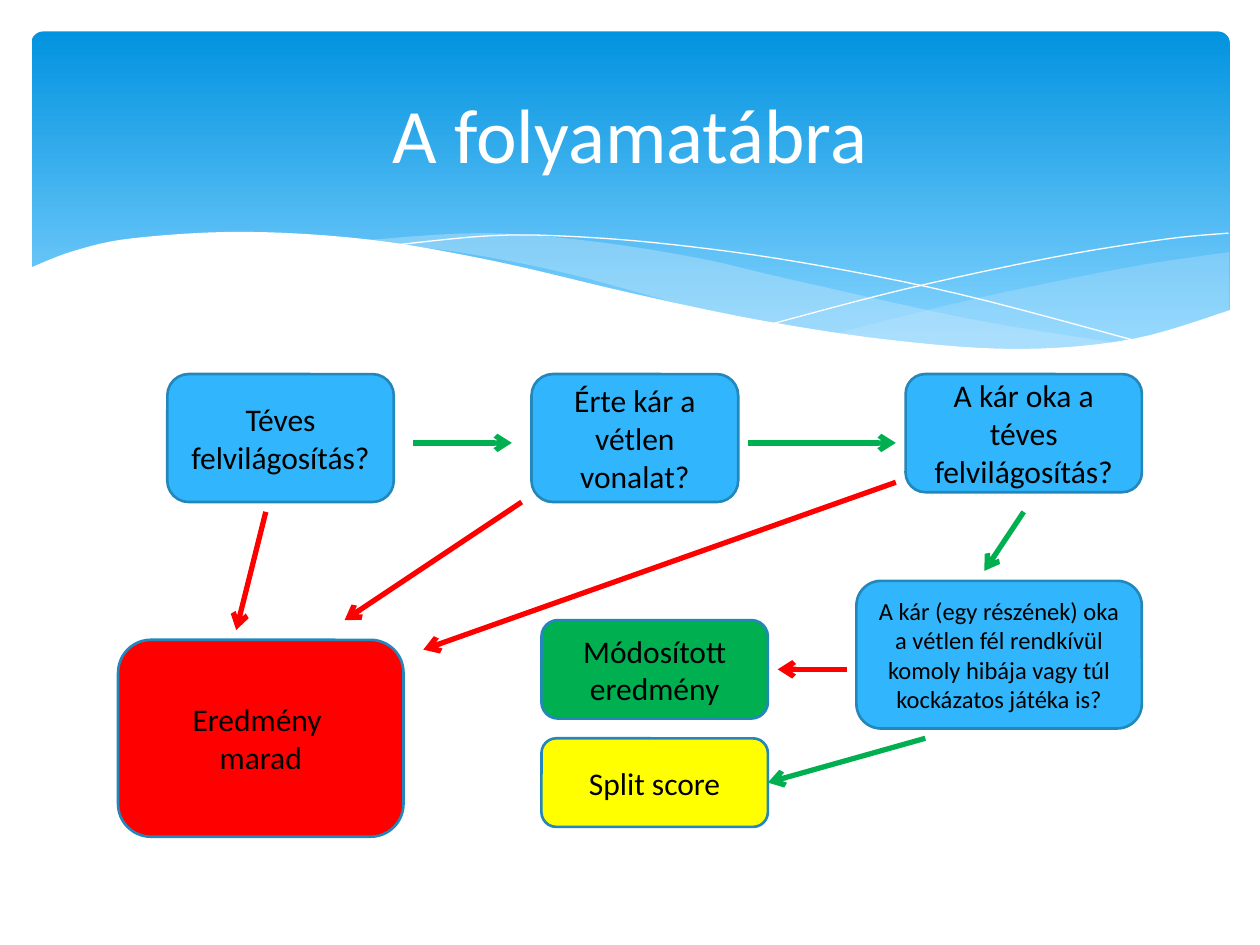
from lxml.etree import SubElement
from pptx import Presentation
from pptx.dml.color import RGBColor
from pptx.enum.shapes import MSO_CONNECTOR as CONNECTOR, MSO_SHAPE as SHAPE
from pptx.enum.text import MSO_ANCHOR as ANCHOR, PP_ALIGN as ALIGN
from pptx.oxml.ns import qn
from pptx.util import Pt

COLORS = {
    "white": "FFFFFF", "black": "000000", "sky_top": "0293E0",
    "sky_bottom": "83D3FE", "mist": "C6E7FC", "question": "31B6FD",
    "border": "2487BB", "yes": "00B050", "no": "FF0000", "split": "FFFF00",
}

RIGHT_WAVE = (
    [(702.5, 144), (655, 151), (600, 161.5), (541, 174.5), (476, 191)],
    [(476, 191), (527, 196.5), (578, 200), (628, 198), (668, 191), (702.5, 178)],
)
MIDDLE_WAVE = (
    [(643, 196.6), (558, 183), (453, 160), (399, 147.5), (335, 137.5),
     (274, 133.2), (206, 137.5)],
    [(206, 137.5), (261, 144), (323, 156), (407.5, 178.5), (468, 190),
     (531, 198), (588, 200), (643, 196.6)],
)
FALLING_LINE = [(222.5, 140.4), (278.6, 134.8), (324, 135), (383.8, 139.7),
                (458, 150), (547, 167.8), (653, 195.8)]
RISING_LINE = [(441.4, 185), (518, 165), (602, 147), (665, 136.8), (702, 133.2)]
FRONT_WAVE = (
    [(16.5, 153.4), (42.5, 143.3), (76.3, 136.1), (139, 132.5), (210, 136.8),
     (281.5, 149), (362, 167.8), (434, 182.9), (510, 194.4), (582.5, 199.4),
     (647.3, 193.7), (703.4, 177.1)],
    [(703.4, 237), (16.5, 237)],
)


def rgb(name):
    return RGBColor.from_string(COLORS[name])


def smooth_curve(points, steps=6):
    """Catmull-Rom curve through the points, as a dense list."""
    padded = [points[0], *points, points[-1]]
    curve = [points[0]]
    for a, b, c, d in zip(padded, padded[1:], padded[2:], padded[3:]):
        for step in range(1, steps + 1):
            t = step / steps
            curve.append(tuple(
                0.5 * (2 * q + (r - p) * t + (2 * p - 5 * q + 4 * r - s) * t**2
                       + (3 * q - p - 3 * r + s) * t**3)
                for p, q, r, s in zip(a, b, c, d)))
    return curve


def add_outline(slide, points, close):
    vertices = [(Pt(x), Pt(y)) for x, y in points]
    builder = slide.shapes.build_freeform(*vertices[0])
    builder.add_line_segments(vertices[1:], close=close)
    outline = builder.convert_to_shape()
    outline.shadow.inherit = False
    return outline


def add_wave(slide, edges, color, opacity=100):
    """Filled band; an edge of two points stays straight."""
    points = [point for edge in edges
              for point in (edge if len(edge) == 2 else smooth_curve(edge))]
    wave = add_outline(slide, points, close=True)
    wave.fill.solid()
    wave.fill.fore_color.rgb = rgb(color)
    wave.line.fill.background()
    if opacity < 100:
        tint = wave.fill._xPr.find(qn("a:solidFill"))[0]
        SubElement(tint, qn("a:alpha"), val=str(opacity * 1000))


def add_hairline(slide, points):
    hairline = add_outline(slide, smooth_curve(points), close=False)
    hairline.fill.background()
    hairline.line.color.rgb = rgb("white")
    hairline.line.width = Pt(0)


def add_sky(slide):
    sky = slide.shapes.add_shape(
        SHAPE.ROUNDED_RECTANGLE, Pt(18), Pt(18), Pt(684.7), Pt(194.4))
    sky.adjustments[0] = 0.034
    sky.shadow.inherit = False
    sky.line.fill.background()
    sky.fill.gradient()
    sky.fill.gradient_angle = 270
    stops = zip(sky.fill.gradient_stops, (0, 0.9), ("sky_top", "sky_bottom"))
    for stop, position, color in stops:
        stop.position = position
        stop.color.rgb = rgb(color)


def write_text(shape, text, size=18, color="black"):
    frame = shape.text_frame
    frame.word_wrap = True
    frame.vertical_anchor = ANCHOR.MIDDLE
    frame.text = text
    for paragraph in frame.paragraphs:
        paragraph.alignment = ALIGN.CENTER
        for run in paragraph.runs:
            run.font.name = "Calibri"
            run.font.size = Pt(size)
            run.font.color.rgb = rgb(color)


def add_title(slide, text):
    title = slide.shapes.title
    title.left, title.top, title.width, title.height = map(Pt, (36, 26.6, 648, 98.6))
    write_text(title, text, size=44, color="white")
    slide.shapes._spTree.append(title._element)  # in front of the sky


def add_box(slide, text, left, top, width, height, fill="question", size=18):
    box = slide.shapes.add_shape(
        SHAPE.ROUNDED_RECTANGLE, *map(Pt, (left, top, width, height)))
    box.shadow.inherit = False
    box.fill.solid()
    box.fill.fore_color.rgb = rgb(fill)
    box.line.color.rgb = rgb("border")
    box.line.width = Pt(1.5)
    write_text(box, text, size=size)
    return box


def add_arrow(slide, color, start, end):
    arrow = slide.shapes.add_connector(
        CONNECTOR.STRAIGHT, *map(Pt, (*start, *end)))
    arrow.line.color.rgb = rgb(color)
    arrow.line.width = Pt(3)
    SubElement(arrow.line._get_or_add_ln(), qn("a:tailEnd"), type="arrow")
    SubElement(arrow._element.spPr, qn("a:effectLst"))
    return arrow


def main():
    deck = Presentation()
    deck.slide_width, deck.slide_height = Pt(720), Pt(540)
    slide = deck.slides.add_slide(deck.slide_layouts[5])

    add_sky(slide)
    add_wave(slide, RIGHT_WAVE, "mist", opacity=29)
    add_wave(slide, MIDDLE_WAVE, "mist", opacity=40)
    add_hairline(slide, FALLING_LINE)
    add_hairline(slide, RISING_LINE)
    add_wave(slide, FRONT_WAVE, "white")
    add_title(slide, "A folyamatábra")

    row_top, outcome_left, outcome_width = 213.75, 309.4, 129.4
    add_box(slide, "Érte kár a vétlen vonalat?", 303.75, row_top, 118.1, 73.1)
    add_box(slide, "A kár oka a téves felvilágosítás?", 517.5, row_top, 135, 67.5)
    add_box(slide, "Téves felvilágosítás?", 95.6, row_top, 129.4, 73.1)
    add_box(slide, "A kár (egy részének) oka a vétlen fél rendkívül komoly hibája "
            "vagy túl kockázatos játéka is?", 489.4, 331.9, 163.1, 84.4, size=14)
    add_box(slide, "Módosított eredmény", outcome_left, 354.4, outcome_width, 56.25,
            fill="yes")
    add_box(slide, "Eredmény \nmarad", 67.5, 365.6, 163.1, 112.5, fill="no")
    split_score = add_box(slide, "Split score", outcome_left, 421.9, outcome_width,
                          50.6, fill="split")

    for color, start, end in (
        ("yes", (236.25, 253.1), (292.5, 253.1)),
        ("no", (151.9, 292.5), (135, 360)),
        ("no", (298.1, 286.9), (196.9, 354.4)),
        ("yes", (427.5, 253.1), (511.9, 253.1)),
        ("no", (511.9, 275.6), (241.9, 371.25)),
        ("yes", (585, 292.5), (562.5, 326.25)),
        ("no", (483.75, 382.5), (444.4, 382.5)),
    ):
        add_arrow(slide, color, start, end)
    add_arrow(slide, "yes", (528.75, 421.9), (438.8, 447.2)).end_connect(split_score, 3)

    deck.save("out.pptx")


if __name__ == "__main__":
    main()
